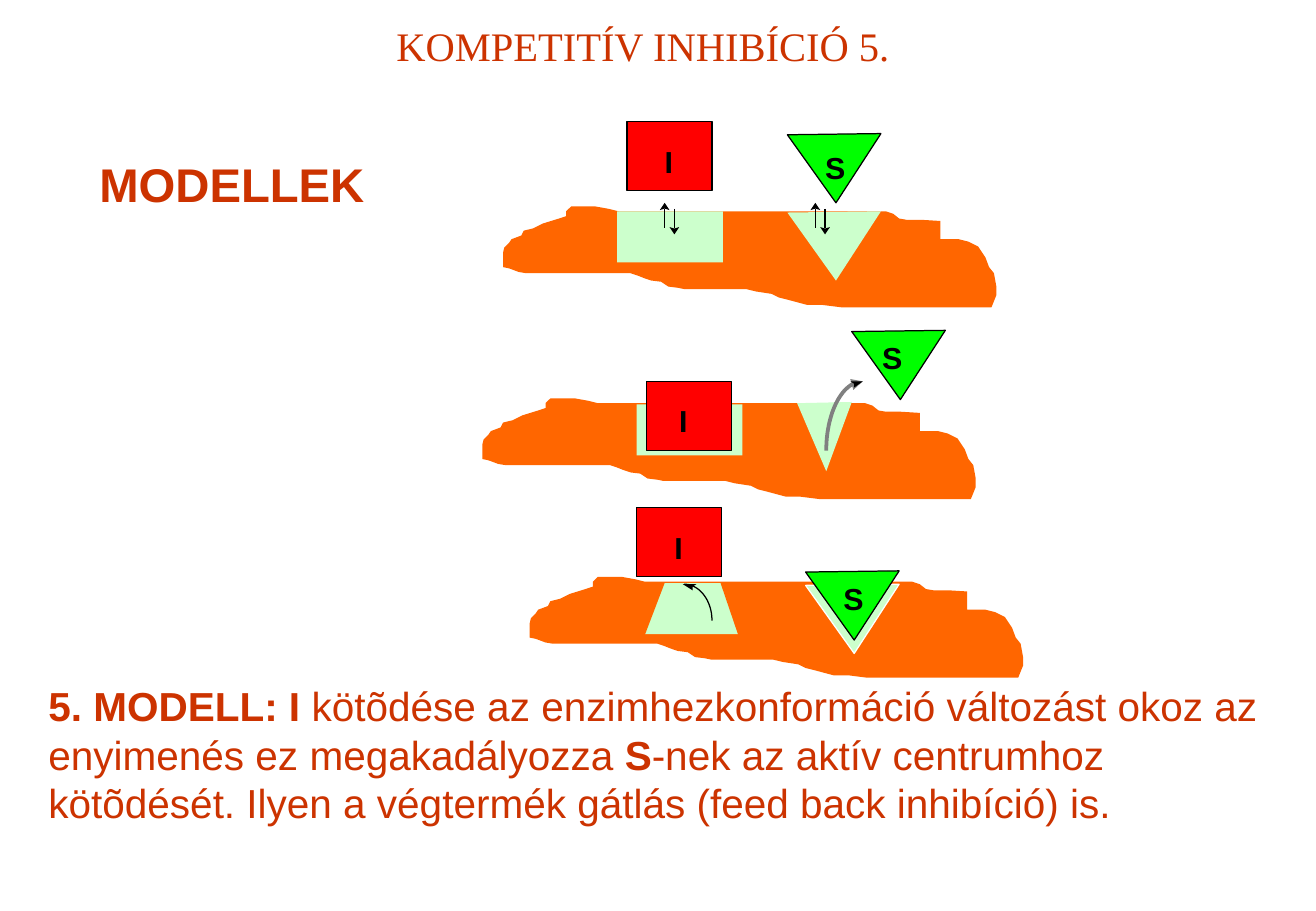
"""Builds the slide on competitive inhibition with three enzyme models."""
import math
from lxml import etree
from pptx import Presentation
from pptx.dml.color import RGBColor
from pptx.enum import shapes, text
from pptx.oxml import ns
from pptx.util import Inches, Pt

RUST = RGBColor(0xCC, 0x33, 0x00)
ORANGE = RGBColor(0xFF, 0x66, 0x00)
MINT = RGBColor(0xCC, 0xFF, 0xCC)
RED = RGBColor(0xFF, 0x00, 0x00)
GREEN = RGBColor(0x00, 0xFF, 0x00)
GRAY = RGBColor(0x80, 0x80, 0x80)
BLACK = RGBColor(0x00, 0x00, 0x00)
WHITE = RGBColor(0xFF, 0xFF, 0xFF)

EDGE = [
    (95, 4), (87, 2), (76, 0), (56, 0), (52, 4), (52, 8), (46, 10), (33, 14),
    (25, 18), (17, 20), (15, 24), (7, 27), (5, 30), (1, 34), (0, 38), (0, 50),
    (5, 51), (13, 54), (19, 55), (105, 55), (111, 57), (116, 59), (122, 61),
    (130, 62), (136, 66), (144, 67), (149, 68), (200, 68), (208, 70),
    (221, 72), (227, 75), (235, 77), (250, 81), (262, 81), (278, 83),
    (402, 83), (406, 73), (406, 66), (404, 55), (400, 50), (397, 42),
    (391, 33), (383, 29), (375, 27), (360, 27), (360, 12), (344, 11),
    (332, 11), (326, 10), (321, 6), (315, 4)]
WEDGE = [(0.4, 0.57), (0.77, 0), (0, 0.01)]

deck = Presentation()
deck.slide_width, deck.slide_height = Inches(10.83), Inches(7.5)
slide = deck.slides.add_slide(deck.slide_layouts[5])
items = slide.shapes


def paint(shape, fill, line=None, width=0.75):
    shape.shadow.inherit = False
    if fill is None:
        shape.fill.background()
    else:
        shape.fill.solid()
        shape.fill.fore_color.rgb = fill
    if line is None:
        shape.line.fill.background()
    else:
        shape.line.color.rgb = line
        shape.line.width = Pt(width)


def trace(points, fill, line=None, width=0.75, close=True):
    spots = [(Inches(x), Inches(y)) for x, y in points]
    path = items.build_freeform(*spots[0], scale=1.0)
    path.add_line_segments(spots[1:], close=close)
    shape = path.convert_to_shape()
    paint(shape, fill, line, width)
    return shape


title = items.title
title.left, title.top = Inches(1.07), Inches(0)
title.width, title.height = Inches(8.44), Inches(0.75)
frame = title.text_frame
frame.text = "KOMPETITÍV INHIBÍCIÓ 5."
frame.vertical_anchor = text.MSO_ANCHOR.MIDDLE
frame.auto_size = text.MSO_AUTO_SIZE.NONE
frame.paragraphs[0].alignment = text.PP_ALIGN.CENTER
run = frame.paragraphs[0].runs[0]
run.font.size = Pt(24)
run.font.name = "Times New Roman"
run.font.color.rgb = RUST
glow = etree.Element(ns.qn("a:effectLst"))
shade = etree.SubElement(glow, ns.qn("a:outerShdw"), dist="25400", dir="2700000")
etree.SubElement(shade, ns.qn("a:srgbClr"), val="000000")
run.font.fill._xPr.find(ns.qn("a:solidFill")).addnext(glow)

for left, top in ((4.14, 1.7), (3.97, 3.28), (4.36, 4.75)):
    trace([(left + x / 100, top + y / 100) for x, y in EDGE], ORANGE)

for left, top, wide, high, fill, line in (
        (5.08, 1.74, 0.87, 0.42, MINT, None),
        (5.24, 3.33, 0.87, 0.42, MINT, None),
        (5.31, 4.8, 0.87, 0.42, MINT, None),
        (5.16, 1, 0.7, 0.57, RED, BLACK),
        (5.32, 3.14, 0.7, 0.57, RED, BLACK),
        (5.24, 4.18, 0.7, 0.57, RED, BLACK)):
    box = items.add_shape(shapes.MSO_SHAPE.RECTANGLE, Inches(left),
                          Inches(top), Inches(wide), Inches(high))
    paint(box, fill, line)

trace([(5, 4.8), (4.84, 5.22), (5.31, 5.22), (5.47, 4.8)], ORANGE)
trace([(6.4, 5.27), (6.56, 4.8), (5.93, 4.8), (6.09, 5.27)], ORANGE)
trace([(6.8, 3.88), (7.01, 3.31), (6.56, 3.32)], MINT)

for left, top, fill, line in (
        (6.48, 1.74, MINT, None), (6.63, 4.81, MINT, WHITE),
        (6.48, 1.1, GREEN, BLACK), (7.01, 2.72, GREEN, BLACK),
        (6.63, 4.7, GREEN, BLACK)):
    trace([(left + x, top + y) for x, y in WEDGE], fill, line)

for site in (5.47, 6.71):
    for x, tip, step in ((site, 1.67, 0.06), (site + 0.08, 1.93, -0.06)):
        stem = items.add_connector(shapes.MSO_CONNECTOR.STRAIGHT, Inches(x),
                                   Inches(1.72), Inches(x), Inches(1.88))
        stem.line.color.rgb = BLACK
        stem.line.width = Pt(0.75)
        etree.SubElement(stem._element.spPr, ns.qn("a:effectLst"))
        trace([(x + 0.04, tip + step), (x, tip + step * 0.8),
               (x - 0.04, tip + step), (x, tip)], BLACK)

turns = [math.radians(3 * n) for n in range(31)]
exit = trace([(7.1 - 0.3 * math.cos(t), 3.71 - 0.57 * math.sin(t)) for t in turns],
             None, GRAY, 2.25, close=False)
etree.SubElement(exit.line._get_or_add_ln(), ns.qn("a:tailEnd"), type="triangle")
trace([(5.63 + 0.23 * math.cos(t), 5.11 - 0.3 * math.sin(t)) for t in turns],
      None, BLACK, close=False)
trace([(7.03, 3.19), (7.03, 3.16), (7, 3.14), (7.1, 3.14)], BLACK)
trace([(5.73, 4.81), (5.7, 4.83), (5.7, 4.86), (5.62, 4.81)], BLACK)

for word, left, top, wide in (
        ("I", 5.47, 1.18, 0.07), ("I", 5.59, 3.31, 0.07), ("I", 5.55, 4.36, 0.07),
        ("S", 6.79, 1.23, 0.17), ("S", 7.26, 2.79, 0.17), ("S", 6.94, 4.78, 0.17)):
    frame = items.add_textbox(Inches(left), Inches(top), Inches(wide),
                              Inches(0.3)).text_frame
    frame.margin_left = frame.margin_right = 0
    frame.margin_top = frame.margin_bottom = 0
    frame.word_wrap = False
    frame.text = word
    font = frame.paragraphs[0].runs[0].font
    font.size, font.name, font.bold = Pt(18), "Arial", True
    font.color.rgb = BLACK

for left, top, wide, high, size, wrap, parts in (
        (0.72, 1.23, 2.41, 0.57, 28, False, ["MODELLEK"]),
        (0.3, 5.56, 10.24, 1.31, 24, True, [
            "5. MODELL: I ",
            "kötõdése az enzimhezkonformáció változást okoz az enyimenés ez "
            "megakadályozza ",
            "S",
            "-nek az aktív centrumhoz kötõdését. Ilyen a végtermék gátlás "
            "(feed back inhibíció) is."])):
    frame = items.add_textbox(Inches(left), Inches(top), Inches(wide),
                              Inches(high)).text_frame
    frame.word_wrap = wrap
    for spot, part in enumerate(parts):
        run = frame.paragraphs[0].add_run()
        run.text = part
        run.font.size, run.font.name = Pt(size), "Arial"
        run.font.bold = spot % 2 == 0
        run.font.color.rgb = RUST

deck.save("out.pptx")
